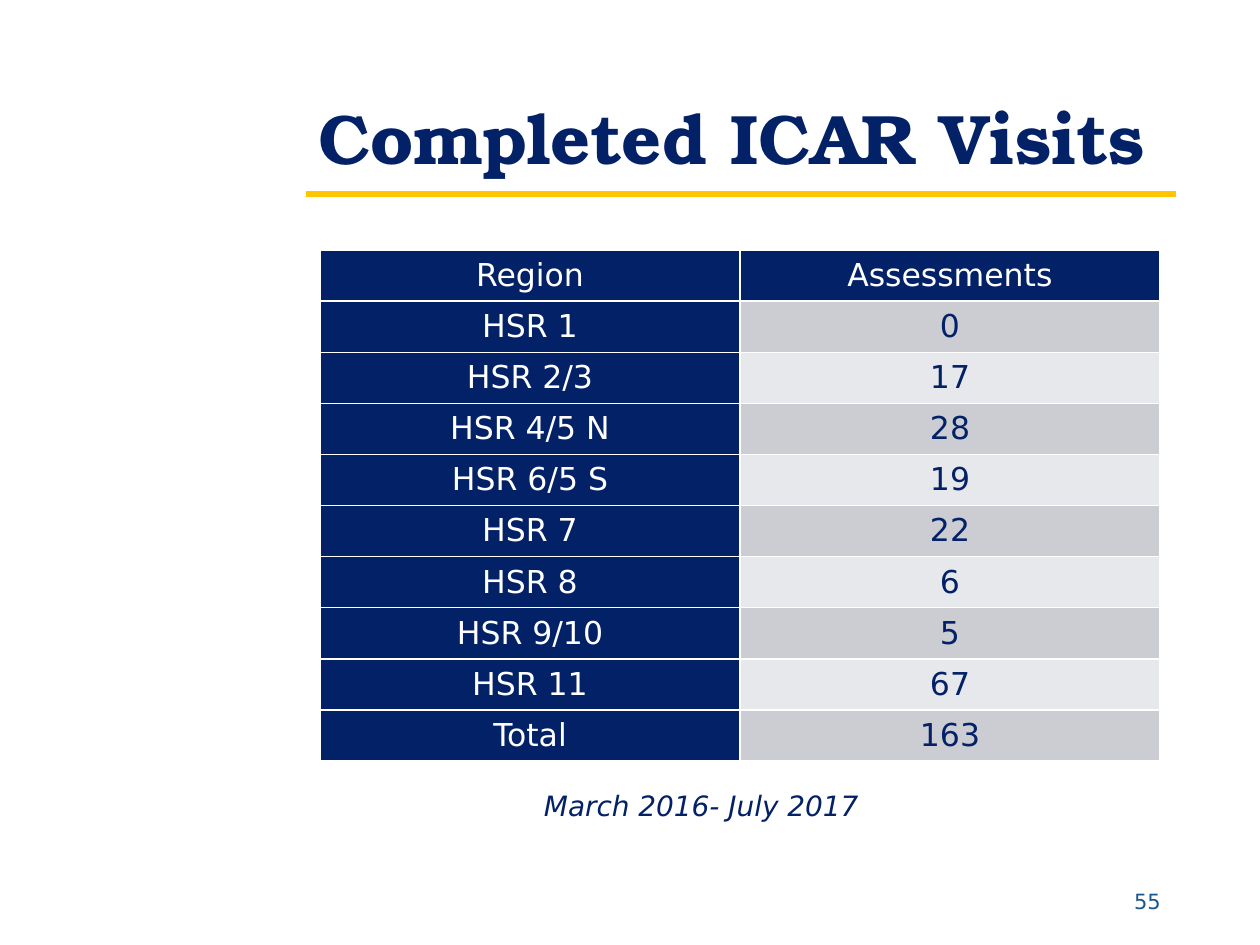
from lxml import etree
from pptx import Presentation
from pptx.dml.color import RGBColor
from pptx.enum.shapes import MSO_CONNECTOR
from pptx.enum.text import MSO_ANCHOR as ANCHOR, PP_ALIGN as ALIGN
from pptx.oxml.ns import qn
from pptx.util import Pt

NAVY = RGBColor(0x02, 0x21, 0x67)
BLUE = RGBColor(0x1A, 0x57, 0x8E)
GOLD = RGBColor(0xFF, 0xC6, 0x00)
WHITE = RGBColor(0xFF, 0xFF, 0xFF)
BANDS = (RGBColor(0xCC, 0xCD, 0xD3), RGBColor(0xE7, 0xE8, 0xEB))
BODY_FONT = "DejaVu Sans"
TITLE_FONT = "TeX Gyre Bonum"

ROWS = [
    ("Region", "Assessments"),
    ("HSR 1", "0"),
    ("HSR 2/3", "17"),
    ("HSR 4/5 N", "28"),
    ("HSR 6/5 S", "19"),
    ("HSR 7", "22"),
    ("HSR 8", "6"),
    ("HSR 9/10", "5"),
    ("HSR 11", "67"),
    ("Total", "163"),
]


def write(tf, text, size, color, name=BODY_FONT):
    p = tf.paragraphs[0]
    p.text = text
    p.font.size = Pt(size)
    p.font.name = name
    p.font.color.rgb = color
    return p


def add_borders(cell, color, width):
    tcPr = cell._tc.get_or_add_tcPr()
    for side in ("a:lnL", "a:lnR", "a:lnT", "a:lnB"):
        ln = etree.SubElement(tcPr, qn(side), w=str(Pt(width)))
        fill = etree.SubElement(ln, qn("a:solidFill"))
        etree.SubElement(fill, qn("a:srgbClr"), val=str(color))


prs = Presentation()
prs.slide_width, prs.slide_height = Pt(720), Pt(540)
s = prs.slides.add_slide(prs.slide_layouts[5])

# Title and the rule below it
rule = s.shapes.add_connector(MSO_CONNECTOR.STRAIGHT, Pt(175), Pt(110.9), Pt(671.8), Pt(110.9))
rule.line.color.rgb = GOLD
rule.line.width = Pt(3)
etree.SubElement(rule._element.spPr, qn("a:effectLst"))

title = s.shapes.title
title.left, title.top, title.width, title.height = Pt(175), Pt(48.2), Pt(495.4), Pt(58.3)
tf = title.text_frame
tf.vertical_anchor = ANCHOR.BOTTOM
p = write(tf, "Completed ICAR Visits", 40, NAVY, TITLE_FONT)
p.font.bold = True
p.alignment = ALIGN.LEFT
p.line_spacing = 0.9

# Visits by region
row_height = 29.2
frame = s.shapes.add_table(len(ROWS), 2, Pt(182.9), Pt(142.9), Pt(480), Pt(row_height * len(ROWS)))
table = frame.table
for row in table.rows:
    row.height = Pt(row_height)
for i, values in enumerate(ROWS):
    for j, value in enumerate(values):
        is_header = i == 0 or j == 0
        cell = table.cell(i, j)
        cell.vertical_anchor = ANCHOR.MIDDLE
        add_borders(cell, WHITE, 1)
        cell.fill.solid()
        cell.fill.fore_color.rgb = NAVY if is_header else BANDS[(i - 1) % 2]
        p = write(cell.text_frame, value, 18, WHITE if is_header else NAVY)
        p.font.bold = False
        p.alignment = ALIGN.CENTER

# Period covered
sp = s.shapes.add_textbox(Pt(303.8), Pt(449.3), Pt(228.2), Pt(37.4))
sp.text_frame.word_wrap = True
p = write(sp.text_frame, "March 2016- July 2017", 16, NAVY)
p.font.italic = True
p.line_spacing = 0.9

# Page number
sp = s.shapes.add_textbox(Pt(549.4), Pt(500.4), Pt(121), Pt(28.8))
sp.text_frame.word_wrap = True
sp.text_frame.vertical_anchor = ANCHOR.MIDDLE
write(sp.text_frame, "55", 12, BLUE).alignment = ALIGN.RIGHT

prs.save("out.pptx")
